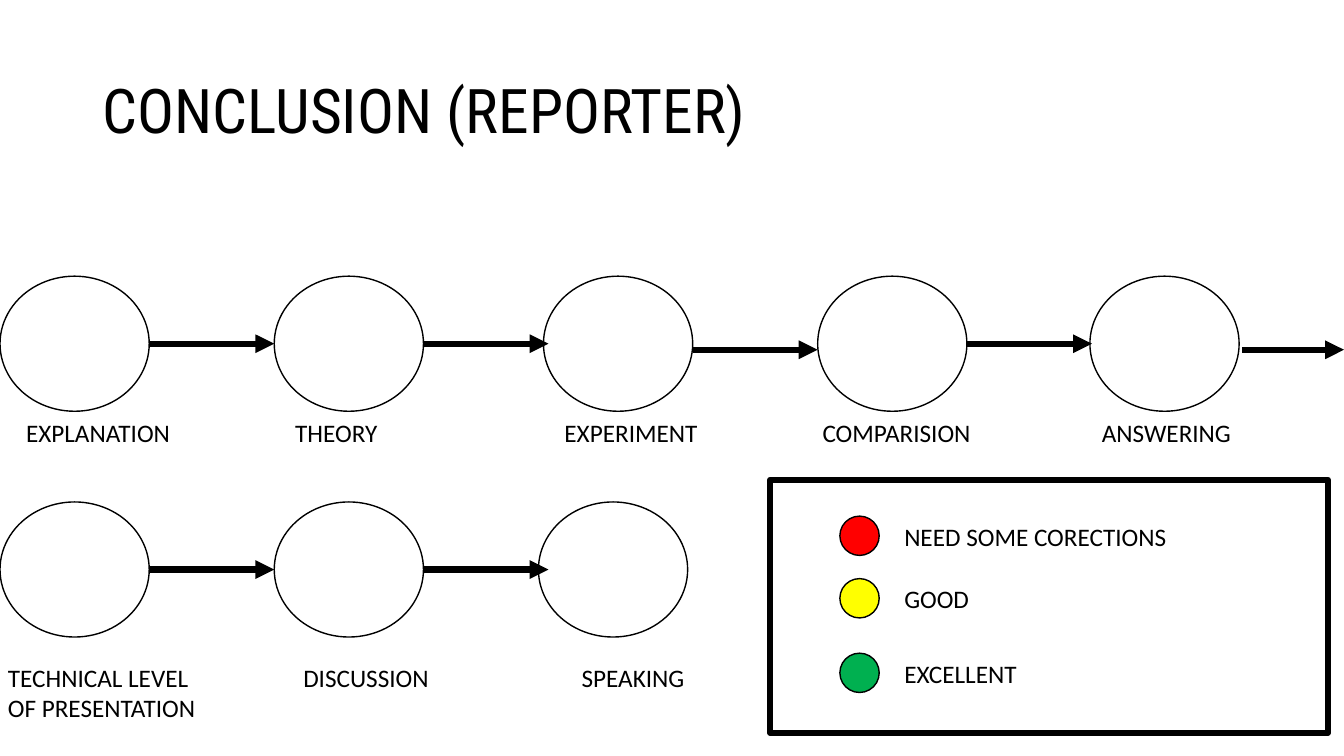
from dataclasses import dataclass

from lxml.etree import SubElement
from pptx import Presentation
from pptx.dml.color import RGBColor
from pptx.enum.shapes import MSO_CONNECTOR, MSO_SHAPE
from pptx.enum.text import MSO_ANCHOR
from pptx.oxml.ns import qn
from pptx.util import Inches, Pt

TITLE = "CONCLUSION (REPORTER)"
# Each step: label, circle left, label left, outgoing arrow (gap, drop) or None
ROWS = [
    {"top": 2.74, "label_top": 4.09, "steps": [
        ("EXPLANATION", 0, 0.16, (0, 0)),
        ("THEORY", 2.72, 2.83, (0, 0)),
        ("EXPERIMENT", 5.39, 5.5, (0, 0.06)),
        ("COMPARISION", 8.11, 8.06, (0, 0)),
        ("ANSWERING", 10.81, 10.83, (0.03, 0.06)),
    ]},
    {"top": 4.98, "label_top": 6.52, "steps": [
        ("TECHNICAL LEVEL OF PRESENTATION", 0, -0.02, (0, 0)),
        ("DISCUSSION", 2.72, 2.91, (0, 0)),
        ("SPEAKING", 5.34, 5.67, None),
    ]},
]
# Each grade: label, colour, top
GRADES = [
    ("NEED SOME CORECTIONS", "FF0000", 5.12),
    ("GOOD", "FFFF00", 5.74),
    ("EXCELLENT", "00B050", 6.48),
]
SLIDE_W, SLIDE_H = 13.33, 7.5
CIRCLE_W, CIRCLE_H = 1.48, 1.34
ARROW_W, LABEL_W, LABEL_H = 1.24, 2.13, 0.4
DOT, DOT_LEFT, GRADE_LEFT, GRADE_W = 0.39, 8.33, 8.87, 3.35


@dataclass(frozen=True)
class Theme:
    ink: str = "000000"
    paper: str = "FFFFFF"
    title_font: str = "Roboto Condensed"
    body_font: str = "Calibri"
    title_size: float = 44
    body_size: float = 18
    thin: float = 1
    thick: float = 4.5


THEME = Theme()


def write(tf, text, font=THEME.body_font, size=THEME.body_size, spacing=None):
    tf.word_wrap = True
    p = tf.paragraphs[0]
    p.line_spacing = spacing
    r = p.add_run()
    r.text = text
    r.font.name, r.font.size = font, Pt(size)
    r.font.color.rgb = RGBColor.from_string(THEME.ink)


def place(sp, *box):
    sp.left, sp.top, sp.width, sp.height = map(Inches, box)


def add_label(s, text, x, y, w):
    write(s.shapes.add_textbox(*map(Inches, (x, y, w, LABEL_H))).text_frame, text)


def add_outlined(s, kind, *box, fill=THEME.paper, width=THEME.thin):
    sp = s.shapes.add_shape(kind, *map(Inches, box))
    sp.shadow.inherit = False
    sp.fill.solid()
    sp.fill.fore_color.rgb = RGBColor.from_string(fill)
    sp.line.color.rgb = RGBColor.from_string(THEME.ink)
    sp.line.width = Pt(width)


def add_arrow(s, x1, x2, y):
    c = s.shapes.add_connector(MSO_CONNECTOR.STRAIGHT, *map(Inches, (x1, y, x2, y)))
    c.line.color.rgb = RGBColor.from_string(THEME.ink)
    c.line.width = Pt(THEME.thick)
    SubElement(c.line._get_or_add_ln(), qn("a:tailEnd"), type="triangle")
    SubElement(c._element.spPr, qn("a:effectLst"))


def add_row(s, top, label_top, steps):
    for label, x, label_x, _ in steps:
        add_outlined(s, MSO_SHAPE.OVAL, x, top, CIRCLE_W, CIRCLE_H)
        add_label(s, label, label_x, label_top, LABEL_W)
    for _, x, _, arrow in steps:
        if arrow:
            gap, drop = arrow
            start = x + CIRCLE_W + gap
            add_arrow(s, start, min(start + ARROW_W, SLIDE_W), top + CIRCLE_H / 2 + drop)


def add_legend(s):
    add_outlined(s, MSO_SHAPE.RECTANGLE, 7.64, 4.76, 5.53, 2.51, width=THEME.thick)
    for label, colour, top in GRADES:
        add_outlined(s, MSO_SHAPE.OVAL, DOT_LEFT, top, DOT, DOT, fill=colour)
        add_label(s, label, GRADE_LEFT, top, GRADE_W)


def main():
    prs = Presentation()
    prs.slide_width, prs.slide_height = Inches(SLIDE_W), Inches(SLIDE_H)
    s = prs.slides.add_slide(prs.slide_layouts[5])
    title = s.shapes.title
    place(title, 0.92, 0.4, 11.5, 1.45)
    title.text_frame.vertical_anchor = MSO_ANCHOR.MIDDLE
    write(title.text_frame, TITLE, font=THEME.title_font, size=THEME.title_size, spacing=0.9)
    title.text_frame.paragraphs[0].alignment = 1
    add_legend(s)
    for row in ROWS:
        add_row(s, **row)
    prs.save("out.pptx")


if __name__ == "__main__":
    main()
